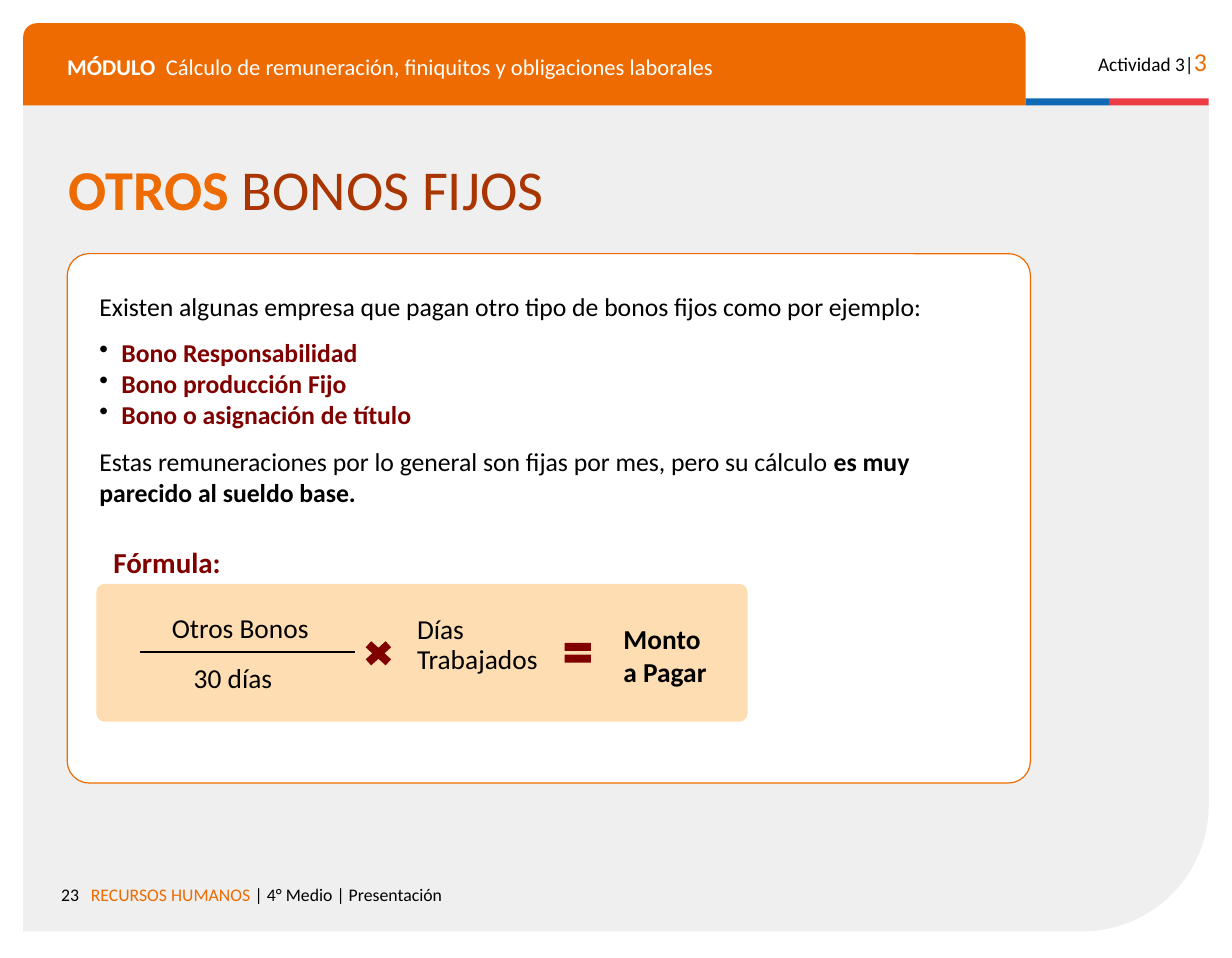
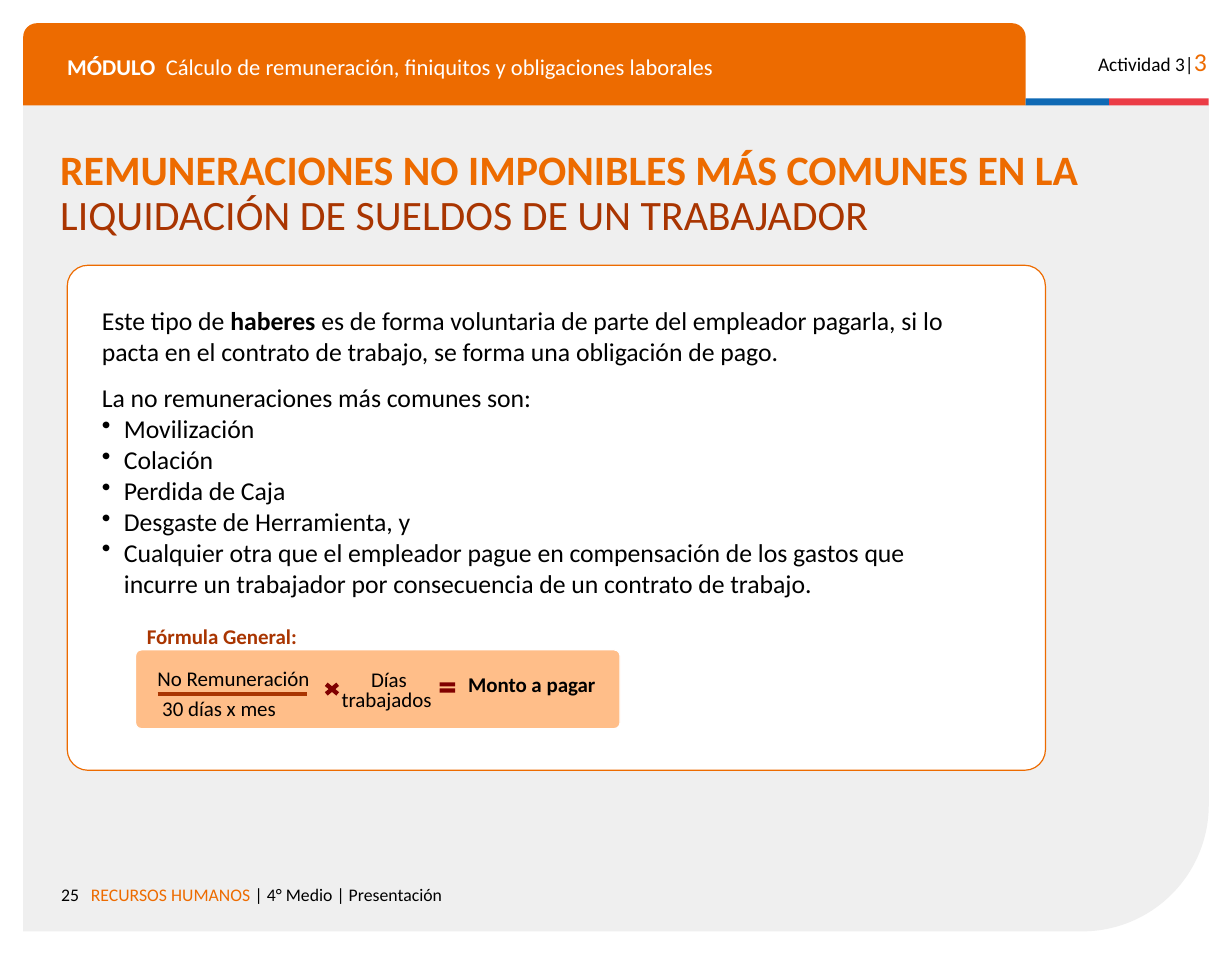
import pptx
import pptx.dml.color
import pptx.enum.shapes
import pptx.enum.text
import pptx.oxml.ns
import pptx.util
import lxml.etree

Pt = pptx.util.Pt
RGBColor = pptx.dml.color.RGBColor
SHAPE = pptx.enum.shapes.MSO_SHAPE
ALIGN = pptx.enum.text.PP_ALIGN
qn = pptx.oxml.ns.qn

BLACK = RGBColor(0x00, 0x00, 0x00)
WHITE = RGBColor(0xFF, 0xFF, 0xFF)
ORANGE = RGBColor(0xED, 0x6B, 0x00)
RUST = RGBColor(0xA9, 0x35, 0x01)
MAROON = RGBColor(0x80, 0x00, 0x00)
GRAY = RGBColor(0xEF, 0xEF, 0xEF)
BLUE = RGBColor(0x0F, 0x69, 0xB4)
RED = RGBColor(0xEB, 0x3C, 0x46)
PEACH = RGBColor(0xFF, 0xDD, 0xB2)
APRICOT = RGBColor(0xFF, 0xB3, 0x75)

FONT = "Calibri"
BULLET_INDENT = 13.7
PARAGRAPH_GAP = 9.75


def add_text(paragraph, text, size=16, color=BLACK, bold=False):
    run = paragraph.add_run()
    run.text = text
    run.font.name = FONT
    run.font.size = Pt(size)
    run.font.bold = bold
    run.font.color.rgb = color


class Deck:
    def __init__(self):
        self.presentation = pptx.Presentation()
        self.presentation.slide_width = Pt(765.36)
        self.presentation.slide_height = Pt(595.44)
        self.slide = None

    def new_slide(self, number):
        self.slide = self.presentation.slides.add_slide(self.presentation.slide_layouts[5])
        panel = self.shape(SHAPE.ROUND_1_RECTANGLE, 14.4, 64.8, 736.56, 514.1, GRAY, adjustments=[0.153])
        panel.rotation = 180
        panel._element.spPr.find(qn("a:xfrm")).set("flipH", "1")
        self.shape(SHAPE.ROUND_2_SAME_RECTANGLE, 14.4, 14.4, 622.8, 51.1, ORANGE, adjustments=[0.167, 0])
        self.shape(SHAPE.RECTANGLE, 637.2, 61.2, 51.84, 4.32, BLUE)
        self.shape(SHAPE.RECTANGLE, 689.04, 61.2, 61.92, 4.32, RED)
        self.paragraph(self.text_frame(14.4, 545.8, 41.8, 20.6), str(number), size=11, align=ALIGN.RIGHT)
        self.paragraph(self.text_frame(49.3, 545.8, 500, 20.6),
                       ("RECURSOS HUMANOS ", {"color": ORANGE}), "| 4° Medio | Presentación", size=11)
        self.paragraph(self.text_frame(664.6, 25.2, 92.2, 27), "Actividad 3|",
                       ("3", {"size": 16, "color": ORANGE}), size=12, align=ALIGN.RIGHT)
        self.paragraph(self.text_frame(34.6, 31, 586, 25), ("MÓDULO  ", {"bold": True}),
                       "Cálculo de remuneración, finiquitos y obligaciones laborales",
                       size=14, color=WHITE, spacing=0.9)

    def title(self, left, top, width, height, strong, light, size, spacing=1.0):
        title = self.slide.shapes.title
        self.slide.shapes._spTree.append(title._element)
        title.left, title.top, title.width, title.height = Pt(left), Pt(top), Pt(width), Pt(height)
        frame = title.text_frame
        frame.auto_size = pptx.enum.text.MSO_AUTO_SIZE.NONE
        frame.vertical_anchor = pptx.enum.text.MSO_ANCHOR.TOP
        self.paragraph(frame, (strong, {"color": ORANGE, "bold": True}), light,
                       size=size, color=RUST, spacing=spacing)

    def shape(self, kind, left, top, width, height, fill, line=None, adjustments=(), opacity=None):
        shape = self.slide.shapes.add_shape(kind, Pt(left), Pt(top), Pt(width), Pt(height))
        shape.shadow.inherit = False
        for index, value in enumerate(adjustments):
            shape.adjustments[index] = value
        shape.fill.solid()
        shape.fill.fore_color.rgb = fill
        if opacity:
            color = shape._element.spPr.find(qn("a:solidFill"))[0]
            lxml.etree.SubElement(color, qn("a:alpha")).set("val", str(opacity * 1000))
        if line is None:
            shape.line.fill.background()
        else:
            shape.line.color.rgb = line
            shape.line.width = Pt(0.75)
        return shape

    def card(self, left, top, width, height):
        self.shape(SHAPE.ROUNDED_RECTANGLE, left, top, width, height, WHITE, ORANGE, [0.041])

    def rule(self, left, right, y, color, weight):
        line = self.slide.shapes.add_connector(
            pptx.enum.shapes.MSO_CONNECTOR.STRAIGHT, Pt(left), Pt(y), Pt(right), Pt(y))
        line.line.color.rgb = color
        line.line.width = Pt(weight)
        lxml.etree.SubElement(line._element.spPr, qn("a:effectLst"))

    def times(self, left, top, width, height):
        self.shape(SHAPE.MATH_MULTIPLY, left, top, width, height, MAROON, adjustments=[0.235])

    def equals(self, left, top, width, height):
        self.shape(SHAPE.MATH_EQUAL, left, top, width, height, MAROON, adjustments=[0.235, 0.118])

    def text_frame(self, left, top, width, height):
        box = self.slide.shapes.add_textbox(Pt(left), Pt(top), Pt(width), Pt(height))
        box.text_frame.word_wrap = True
        return box.text_frame

    def paragraph(self, frame, *parts, align=ALIGN.LEFT, spacing=1.0, before=0, indent=0, bullet=False, **style):
        paragraph = frame.paragraphs[0]
        if paragraph.runs:
            paragraph = frame.add_paragraph()
        paragraph.alignment = align
        paragraph.line_spacing = spacing
        paragraph.space_before = Pt(before)
        properties = paragraph._p.get_or_add_pPr()
        if bullet:
            indent = BULLET_INDENT
            properties.set("indent", str(-Pt(BULLET_INDENT)))
            color = lxml.etree.SubElement(properties, qn("a:buClr"))
            lxml.etree.SubElement(color, qn("a:srgbClr")).set("val", str(BLACK))
            lxml.etree.SubElement(properties, qn("a:buChar")).set("char", "•")
        if indent:
            properties.set("marL", str(Pt(indent)))
        for part in parts:
            text, changes = (part, {}) if isinstance(part, str) else part
            add_text(paragraph, text, **{**style, **changes})

    def lines(self, left, top, width, height, *texts, **style):
        frame = self.text_frame(left, top, width, height)
        for text in texts:
            self.paragraph(frame, text, **style)

    def fraction(self, left, top, width, height, numerator, denominator, indent, before=0, **style):
        frame = self.text_frame(left, top, width, height)
        self.paragraph(frame, numerator, **style)
        self.paragraph(frame, denominator, indent=indent, before=before, **style)


def fixed_bonuses(deck):
    deck.new_slide(23)
    deck.card(41.8, 157.7, 598.3, 329)
    deck.title(35.3, 92.2, 694.8, 49.7, "OTROS ", "BONOS FIJOS", 35)
    body = deck.text_frame(54.7, 177.1, 548, 143.3)
    deck.paragraph(body, "Existen algunas empresa que pagan otro tipo de bonos fijos como por ejemplo:")
    bonuses = ["Bono Responsabilidad", "Bono producción Fijo", "Bono o asignación de título"]
    for index, bonus in enumerate(bonuses):
        deck.paragraph(body, bonus, bullet=True, color=MAROON, bold=True,
                       before=0 if index else PARAGRAPH_GAP)
    deck.paragraph(body, "Estas remuneraciones por lo general son fijas por mes, pero su cálculo ",
                   ("es muy parecido al sueldo base.", {"bold": True}), before=PARAGRAPH_GAP)

    deck.shape(SHAPE.ROUNDED_RECTANGLE, 59.8, 362.9, 404.6, 85.7, PEACH, adjustments=[0.06])
    deck.lines(63.4, 334.8, 158.4, 29.2, "Fórmula:", size=18, color=MAROON, bold=True)
    deck.fraction(99.7, 376.3, 122, 59, "Otros Bonos", "30 días", 13.6, before=10.4, size=17)
    deck.rule(87.1, 220.3, 405.4, BLACK, 1.5)
    deck.times(223.2, 395.3, 23.8, 21.6)
    deck.lines(252, 379.4, 108, 44.6, "Días", "Trabajados", size=17, spacing=0.9)
    deck.equals(347.8, 395.3, 22.3, 20.9)
    deck.lines(380.2, 383, 108, 48.2, "Monto", "a Pagar", size=17, bold=True)


def untaxed_pay(deck):
    deck.new_slide(25)
    deck.title(30.2, 89.3, 735.1, 64.8, "REMUNERACIONES NO IMPONIBLES MÁS COMUNES EN LA ",
               "LIQUIDACIÓN DE SUELDOS DE UN TRABAJADOR", 26, spacing=0.9)
    deck.card(41.8, 164.9, 607.7, 313.9)
    body = deck.text_frame(56.2, 185.8, 557.3, 191.5)
    deck.paragraph(body, "Este tipo de ", ("haberes", {"bold": True}),
                   " es de forma voluntaria de parte del empleador pagarla, si lo pacta en el "
                   "contrato de trabajo, se forma una obligación de pago.")
    deck.paragraph(body, "La no remuneraciones más comunes son:", before=PARAGRAPH_GAP)
    for item in ["Movilización", "Colación", "Perdida de Caja", "Desgaste de Herramienta, y",
                 "Cualquier otra que el empleador pague en compensación de los gastos que incurre "
                 "un trabajador por consecuencia de un contrato de trabajo."]:
        deck.paragraph(body, item, bullet=True)

    deck.shape(SHAPE.ROUNDED_RECTANGLE, 84.2, 403.9, 301, 49, APRICOT, WHITE, [0.076], opacity=85)
    deck.fraction(90.7, 406.8, 117.4, 44.6, "No Remuneración", "30 días x mes", 3, size=13, spacing=1.2)
    deck.rule(97.9, 190.8, 431.3, RUST, 2)
    deck.times(199.4, 422.6, 13.7, 11.5)
    deck.equals(271.4, 421.9, 13, 10.8)
    deck.lines(203.8, 414, 75.6, 33.1, "Días", "trabajados ", size=13, spacing=0.8, align=ALIGN.CENTER)
    deck.lines(283.7, 416.9, 142.6, 20.2, "Monto a pagar", size=13, spacing=0.8, bold=True)
    deck.lines(84.2, 380.9, 117.4, 25.9, "Fórmula General:", size=13, spacing=1.2, color=RUST, bold=True)


def main():
    deck = Deck()
    fixed_bonuses(deck)
    untaxed_pay(deck)
    deck.presentation.save("out.pptx")


if __name__ == "__main__":
    main()
